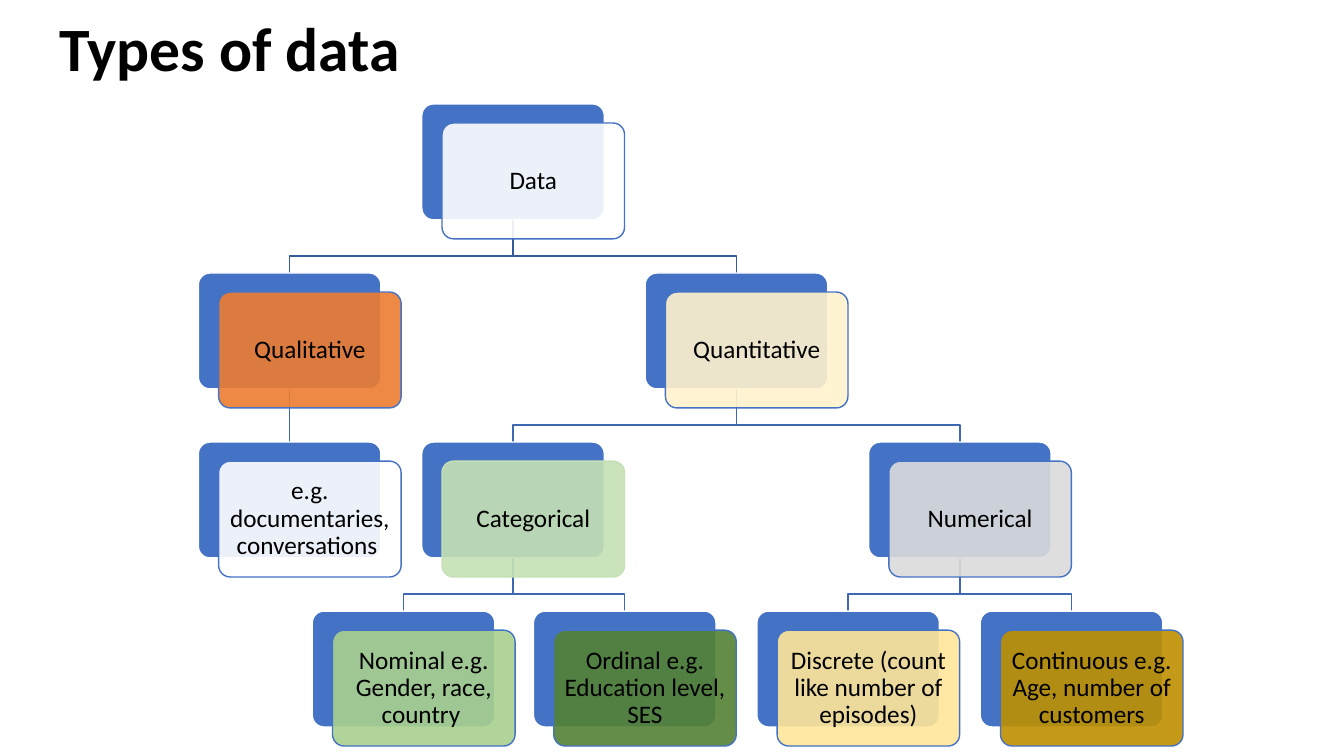
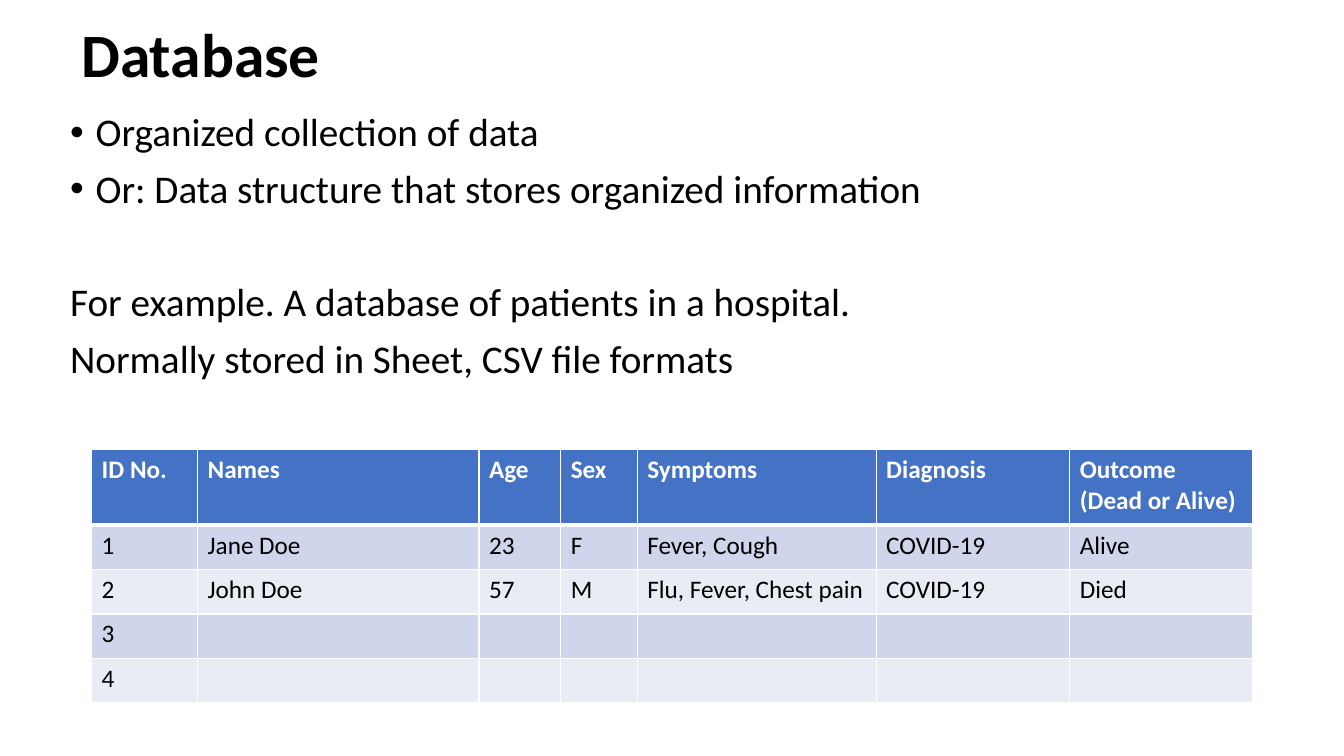
from dataclasses import dataclass

from lxml import etree
from pptx import Presentation
from pptx.dml.color import RGBColor
from pptx.enum.shapes import MSO_CONNECTOR, MSO_SHAPE
from pptx.enum.text import MSO_ANCHOR, PP_ALIGN
from pptx.oxml.ns import qn
from pptx.util import Cm, Pt

ROUNDED = MSO_SHAPE.ROUNDED_RECTANGLE
STRAIGHT = MSO_CONNECTOR.STRAIGHT
MIDDLE, TOP = MSO_ANCHOR.MIDDLE, MSO_ANCHOR.TOP
LEFT, CENTER = PP_ALIGN.LEFT, PP_ALIGN.CENTER

BLACK, WHITE, BLUE = "000000", "FFFFFF", "4472C4"
ROOT_LINK, BRANCH_LINK = "365B9D", "3E67B2"
BANDS = ("CFD5EA", "E9EBF5")


def color(value):
    return RGBColor.from_string(value)


@dataclass
class Node:
    text: str
    column: float
    row: int
    fill: str
    parent: str = ""
    outline: str = BLUE

    @property
    def left(self):
        return 5 + 5.63 * self.column

    @property
    def top(self):
        return 2.62 + 4.26 * self.row


class Deck:
    font = "Calibri"
    box_width, box_height = 4.6, 2.92
    shift_x, shift_y = 0.51, 0.48

    def __init__(self):
        self.presentation = Presentation()
        self.presentation.slide_width = Cm(33.87)
        self.presentation.slide_height = Cm(19.05)
        self.slide = None

    def new_slide(self, title, left, width, height):
        layout = self.presentation.slide_layouts[6]
        self.slide = self.presentation.slides.add_slide(layout)
        frame = self.text_box(left, 0, width, height, MIDDLE)
        self.add_text(frame.paragraphs[0], title, 44, bold=True)

    def text_box(self, left, top, width, height, anchor=TOP):
        shape = self.slide.shapes.add_textbox(Cm(left), Cm(top), Cm(width), Cm(height))
        frame = shape.text_frame
        frame.word_wrap = True
        frame.vertical_anchor = anchor
        return frame

    def add_text(self, paragraph, text, size, ink=BLACK, bold=False, align=LEFT, spacing=0.9):
        paragraph.alignment = align
        paragraph.line_spacing = spacing
        run = paragraph.add_run()
        run.text = text
        run.font.name = self.font
        run.font.size = Pt(size)
        run.font.bold = bold
        run.font.color.rgb = color(ink)

    def body(self, left, top, width, height, lines):
        frame = self.text_box(left, top, width, height)
        for index, (text, bulleted, space_before) in enumerate(lines):
            paragraph = frame.add_paragraph() if index else frame.paragraphs[0]
            self.add_text(paragraph, text, 28)
            paragraph.space_before = Pt(space_before)
            if bulleted:
                self.bullet(paragraph)

    def bullet(self, paragraph):
        properties = paragraph._p.get_or_add_pPr()
        properties.set("marL", str(Cm(0.64)))
        properties.set("indent", str(-Cm(0.64)))
        etree.SubElement(properties, qn("a:buFont"), typeface="Arial")
        etree.SubElement(properties, qn("a:buChar"), char="•")

    def box(self, left, top, fill, outline, opacity=100):
        shape = self.slide.shapes.add_shape(
            ROUNDED, Cm(left), Cm(top), Cm(self.box_width), Cm(self.box_height))
        shape.adjustments[0] = 0.1
        shape.shadow.inherit = False
        shape.fill.solid()
        shape.fill.fore_color.rgb = color(fill)
        shape.line.color.rgb = color(outline)
        shape.line.width = Pt(1)
        if opacity < 100:
            fill_color = shape._element.spPr.find(qn("a:solidFill"))[0]
            etree.SubElement(fill_color, qn("a:alpha"), val=str(opacity * 1000))
        return shape

    def card(self, node):
        self.box(node.left, node.top, BLUE, WHITE)
        front = self.box(node.left + self.shift_x, node.top + self.shift_y,
                         node.fill, node.outline, 90)
        frame = front.text_frame
        frame.word_wrap = True
        frame.vertical_anchor = MIDDLE
        frame.margin_left = frame.margin_right = Cm(0.18)
        frame.margin_top = frame.margin_bottom = Cm(0.18)
        self.add_text(frame.paragraphs[0], node.text, 18, align=CENTER)

    def link(self, parent, child):
        start_x = Cm(parent.left + self.box_width / 2)
        start_y = Cm(parent.top + self.box_height)
        end_x, end_y = Cm(child.left + self.box_width / 2), Cm(child.top)
        shapes = self.slide.shapes
        if start_x == end_x:
            shape = shapes.add_connector(STRAIGHT, start_x, start_y, end_x, end_y)
            etree.SubElement(shape._element.spPr, qn("a:effectLst"))
        else:
            bend_y = start_y + Cm(0.91)
            outline = shapes.build_freeform(start_x, start_y)
            outline.add_line_segments(
                [(start_x, bend_y), (end_x, bend_y), (end_x, end_y)], close=False)
            shape = outline.convert_to_shape()
            shape.shadow.inherit = False
            shape.fill.background()
        shape.line.color.rgb = color(BRANCH_LINK if parent.parent else ROOT_LINK)
        shape.line.width = Pt(1)

    def tree(self, nodes):
        for node in nodes.values():
            if node.parent:
                self.link(nodes[node.parent], node)
        for node in nodes.values():
            self.card(node)

    def table(self, left, top, widths, heights, rows):
        table = self.slide.shapes.add_table(
            len(rows), len(widths), Cm(left), Cm(top),
            Cm(sum(widths)), Cm(sum(heights))).table
        for column, width in zip(table.columns, widths):
            column.width = Cm(width)
        for index, (row, height, values) in enumerate(zip(table.rows, heights, rows)):
            row.height = Cm(height)
            header = index == 0
            for position, cell in enumerate(row.cells):
                self.borders(cell, 3 if index == 1 else 1, 3 if header else 1)
                cell.fill.solid()
                cell.fill.fore_color.rgb = color(BLUE if header else BANDS[(index - 1) % 2])
                if position < len(values):
                    self.add_text(cell.text_frame.paragraphs[0], values[position], 18,
                                  WHITE if header else BLACK, header, spacing=1.0)

    def borders(self, cell, top, bottom):
        properties = cell._tc.get_or_add_tcPr()
        for side, width in (("L", 1), ("R", 1), ("T", top), ("B", bottom)):
            line = etree.SubElement(properties, qn("a:ln" + side), w=str(Pt(width)))
            fill = etree.SubElement(line, qn("a:solidFill"))
            etree.SubElement(fill, qn("a:srgbClr"), val=WHITE)


def main():
    deck = Deck()

    deck.new_slide("Types of data", 1.24, 29.44, 2.62)
    deck.tree({
        "data": Node("Data", 1, 0, WHITE),
        "qualitative": Node("Qualitative", 0, 1, "ED7D31", "data"),
        "quantitative": Node("Quantitative", 2, 1, "FFF2CC", "data"),
        "examples": Node("e.g. documentaries, conversations ", 0, 2, WHITE, "qualitative"),
        "categorical": Node("Categorical", 1, 2, "C5E0B4", "quantitative", "C5E0B4"),
        "numerical": Node("Numerical", 3, 2, "DBDBDB", "quantitative"),
        "nominal": Node("Nominal e.g. Gender, race, country ", 0.51, 3, "A9D18E",
                        "categorical"),
        "ordinal": Node("Ordinal e.g. Education level, SES", 1.5, 3, "548235",
                        "categorical"),
        "discrete": Node("Discrete (count like number of episodes)", 2.5, 3, "FFE699",
                         "numerical"),
        "continuous": Node("Continuous e.g. Age, number of customers", 3.5, 3, "BF9000",
                           "numerical"),
    })

    deck.new_slide("Database", 1.8, 29.21, 2.92)
    deck.body(1.52, 2.72, 30.02, 14.45, [
        ("Organized collection of data", True, 10),
        ("Or: Data structure that stores organized information", True, 10),
        ("For example. A database of patients in a hospital.", False, 51),
        ("Normally stored in Sheet, CSV file formats", False, 10),
    ])
    deck.table(2.31, 11.33, [2.67, 7.09, 2.06, 1.93, 6.02, 4.88, 4.6],
               [1.9] + [1.12] * 4, [
        ("ID No.", "Names", "Age", "Sex", "Symptoms", "Diagnosis",
         "Outcome (Dead or Alive)"),
        ("1", "Jane Doe", "23", "F", "Fever, Cough", "COVID-19", "Alive"),
        ("2", "John Doe", "57", "M", "Flu, Fever, Chest pain", "COVID-19", "Died"),
        ("3",),
        ("4",),
    ])

    deck.presentation.save("out.pptx")


if __name__ == "__main__":
    main()
